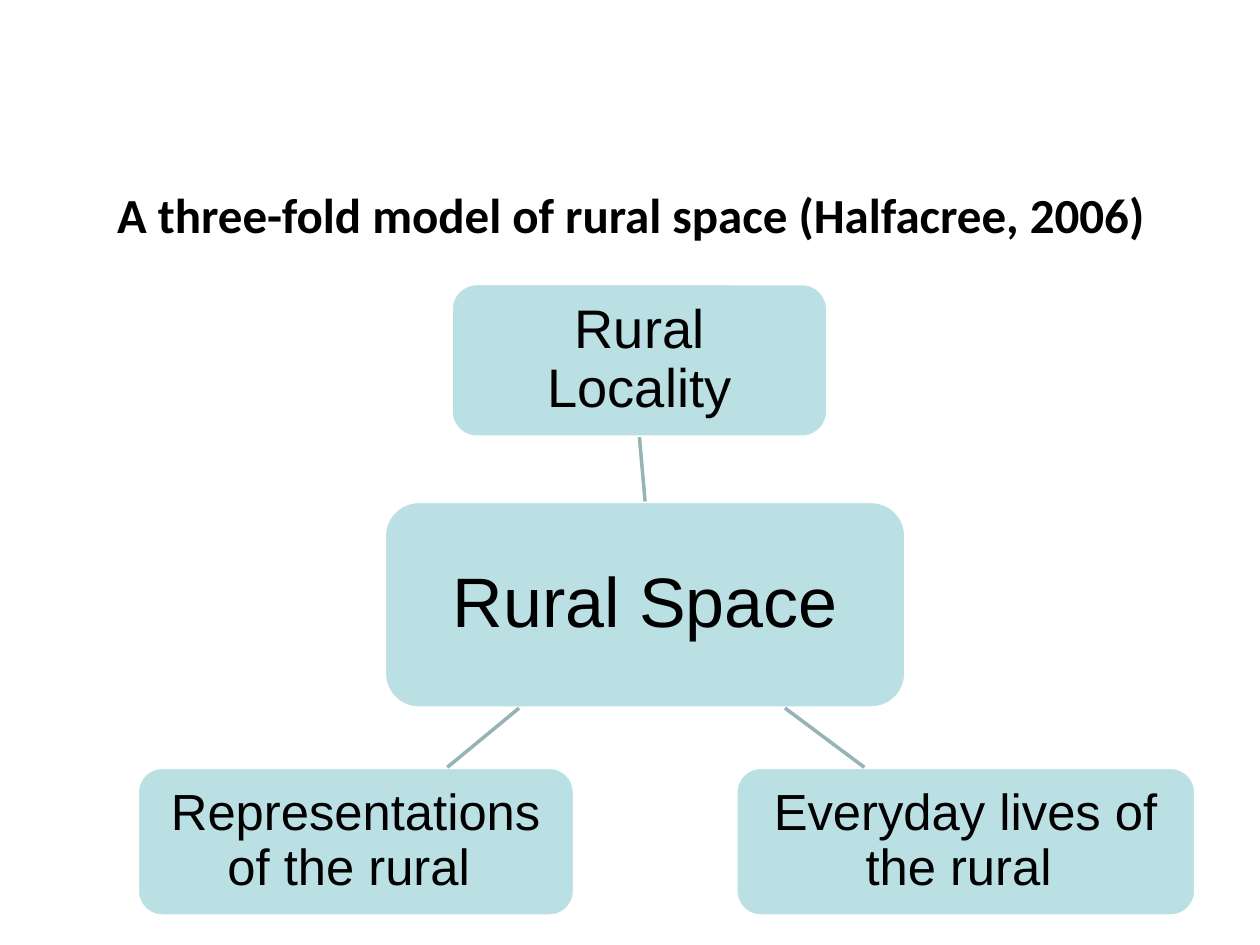
import pptx
import pptx.dml.color
import pptx.enum.shapes
import pptx.enum.text
import pptx.oxml.ns
import pptx.util
import lxml.etree

Inches = pptx.util.Inches
Pt = pptx.util.Pt
COLORS = {"text": "000000", "box": "BBE0E3", "outline": "FFFFFF", "link": "96B3B6"}


def color(name):
    """Return the named colour as an RGBColor."""
    return pptx.dml.color.RGBColor.from_string(COLORS[name])


def format_text(text_frame, font_name, size, alignment, bold=False):
    """Format the only paragraph of a text frame."""
    text_frame.word_wrap = True
    text_frame.auto_size = pptx.enum.text.MSO_AUTO_SIZE.NONE
    text_frame.vertical_anchor = pptx.enum.text.MSO_ANCHOR.MIDDLE
    paragraph = text_frame.paragraphs[0]
    paragraph.alignment = alignment
    font = paragraph.runs[0].font
    font.name, font.size, font.bold = font_name, Pt(size), bold
    font.color.rgb = color("text")


def add_title(slide, text, left, top, width, height):
    """Place the slide title in the given box."""
    title = slide.shapes.title
    title.left, title.top = Inches(left), Inches(top)
    title.width, title.height = Inches(width), Inches(height)
    title.text_frame.text = text
    format_text(title.text_frame, "Calibri", 28, pptx.enum.text.PP_ALIGN.LEFT, True)


def add_node(slide, text, size, inset, left, top, width, height):
    """Add a rounded box of the model with centred text."""
    shape = slide.shapes.add_shape(
        pptx.enum.shapes.MSO_SHAPE.ROUNDED_RECTANGLE,
        Inches(left), Inches(top), Inches(width), Inches(height))
    shape.shadow.inherit = False
    shape.fill.solid()
    shape.fill.fore_color.rgb = color("box")
    shape.line.color.rgb = color("outline")
    shape.line.width = Pt(2)
    text_frame = shape.text_frame
    text_frame.text = text
    text_frame.margin_left = text_frame.margin_right = Inches(inset)
    text_frame.margin_top = text_frame.margin_bottom = Inches(inset)
    format_text(text_frame, "Arial", size, pptx.enum.text.PP_ALIGN.CENTER)
    text_frame.paragraphs[0].line_spacing = 0.9
    return shape


def add_link(slide, begin_x, begin_y, end_x, end_y):
    """Add a straight line between two points."""
    connector = slide.shapes.add_connector(
        pptx.enum.shapes.MSO_CONNECTOR.STRAIGHT, begin_x, begin_y, end_x, end_y)
    connector.line.color.rgb = color("link")
    connector.line.width = Pt(2)
    lxml.etree.SubElement(connector._element.spPr, pptx.oxml.ns.qn("a:effectLst"))
    return connector


def add_model(slide, left, top, width, height):
    """Add the hub, its three surrounding boxes and their links."""
    bottom_top = top + height - 1.18
    hub = add_node(slide, "Rural Space", 40, 0.19, left + 1.96, top + 1.73, 4.14, 1.64)
    locality = add_node(slide, "Rural Locality", 31, 0.15, left + 2.49, top, 2.99, 1.22)
    add_node(slide, "Everyday lives of the rural ", 29, 0.14,
             left + width - 3.65, bottom_top, 3.65, 1.18)
    add_node(slide, "Representations of the rural ", 29, 0.14,
             left, bottom_top, 3.47, 1.18)
    link = add_link(slide, 0, 0, 0, 0)
    link.begin_connect(hub, 0)
    link.end_connect(locality, 2)
    for begin_x, end_x in ((5.14, 5.77), (3.03, 2.46)):
        add_link(slide, Inches(left + begin_x), hub.top + hub.height,
                 Inches(left + end_x), Inches(bottom_top))


def main():
    """Build and save the presentation."""
    presentation = pptx.Presentation()
    presentation.slide_width, presentation.slide_height = Inches(10), Inches(7.5)
    slide = presentation.slides.add_slide(presentation.slide_layouts[5])
    add_title(slide, "A three-fold model of rural space (Halfacree, 2006)",
              0.83, 1.39, 9.17, 0.61)
    add_model(slide, 1.09, 2.25, 8.4, 5.02)
    presentation.save("out.pptx")


if __name__ == "__main__":
    main()
